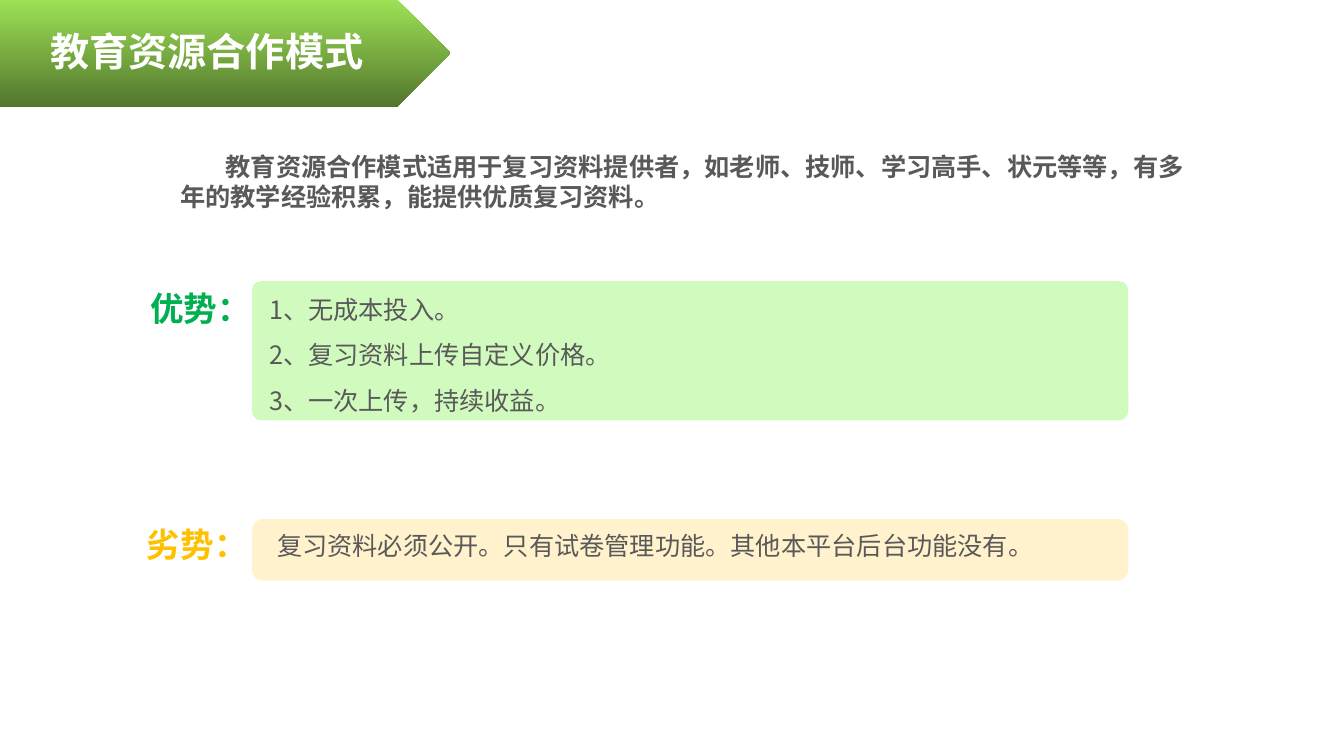
from dataclasses import dataclass

from pptx import Presentation
from pptx.dml.color import RGBColor
from pptx.enum.shapes import MSO_SHAPE
from pptx.enum.text import MSO_ANCHOR
from pptx.oxml.ns import qn
from pptx.oxml.xmlchemy import OxmlElement
from pptx.shapes.autoshape import Shape
from pptx.slide import Slide
from pptx.util import Inches, Pt


@dataclass(frozen=True)
class Theme:
    """Colours, font and type sizes of the slide."""

    font: str = "Noto Sans CJK SC"
    white: str = "FFFFFF"
    body: str = "595959"
    banner_top: str = "9EE256"
    banner_bottom: str = "52762D"
    advantage: str = "00B050"
    advantage_panel: str = "D1FABE"
    drawback: str = "FFC000"
    drawback_panel: str = "FFF2CC"
    title_size: int = 28
    label_size: int = 24
    body_size: int = 18


@dataclass(frozen=True)
class Box:
    """Position and size in inches."""

    left: float
    top: float
    width: float
    height: float

    def lengths(self) -> tuple[Inches, ...]:
        """Return the four measures as lengths."""
        return tuple(Inches(value) for value in (self.left, self.top, self.width, self.height))


@dataclass(frozen=True)
class Section:
    """A coloured label beside a panel of points."""

    label: str
    points: tuple[str, ...]
    label_box: Box
    panel_box: Box
    text_box: Box
    label_color: str
    panel_color: str
    corner: float
    line_spacing: float


THEME = Theme()

SECTIONS = (
    Section(
        "优势：",
        ("1、无成本投入。", "2、复习资料上传自定义价格。", "3、一次上传，持续收益。"),
        Box(1.39, 2.81, 1.2, 0.53),
        Box(2.5, 2.79, 8.69, 1.38),
        Box(2.57, 2.72, 9.51, 1.45),
        THEME.advantage,
        THEME.advantage_panel,
        0.064,
        1.5,
    ),
    Section(
        "劣势：",
        ("复习资料必须公开。只有试卷管理功能。其他本平台后台功能没有。",),
        Box(1.36, 5.15, 1.2, 0.53),
        Box(2.5, 5.15, 8.69, 0.61),
        Box(2.65, 5.21, 8.03, 0.42),
        THEME.drawback,
        THEME.drawback_panel,
        0.182,
        1.0,
    ),
)


def add_text(
    slide: Slide,
    box: Box,
    *lines: str,
    size: int = THEME.body_size,
    color: str = THEME.body,
    bold: bool = False,
    line_spacing: float = 1.0,
    indent: float = 0,
) -> None:
    """Add a text box with one paragraph per line."""
    frame = slide.shapes.add_textbox(*box.lengths()).text_frame
    frame.word_wrap = True
    frame.vertical_anchor = MSO_ANCHOR.TOP
    for index, line in enumerate(lines):
        paragraph = frame.add_paragraph() if index else frame.paragraphs[0]
        paragraph.line_spacing = line_spacing
        if indent:
            paragraph._p.get_or_add_pPr().set("indent", str(Inches(indent)))
        run = paragraph.add_run()
        run.text = line
        run.font.name = THEME.font
        run.font.size = Pt(size)
        run.font.bold = bold
        run.font.color.rgb = RGBColor.from_string(color)
        east_asian = OxmlElement("a:ea")
        east_asian.set("typeface", THEME.font)
        run._r.rPr.find(qn("a:latin")).addnext(east_asian)


def add_plain_shape(slide: Slide, kind: MSO_SHAPE, box: Box) -> Shape:
    """Add a preset shape without outline or shadow."""
    shape = slide.shapes.add_shape(kind, *box.lengths())
    shape.shadow.inherit = False
    shape.line.fill.background()
    return shape


def add_banner(slide: Slide, title: str) -> None:
    """Add the gradient arrow banner and its title."""
    banner = add_plain_shape(slide, MSO_SHAPE.PENTAGON, Box(0, -0.01, 4.47, 1.07))
    banner.fill.gradient()
    banner.fill.gradient_angle = 270
    for stop, color in zip(banner.fill.gradient_stops, (THEME.banner_top, THEME.banner_bottom)):
        stop.color.rgb = RGBColor.from_string(color)
    add_text(slide, Box(0.4, 0.22, 3.37, 0.6), title,
             size=THEME.title_size, color=THEME.white, bold=True)


def add_section(slide: Slide, section: Section) -> None:
    """Add a panel with its label and points."""
    panel = add_plain_shape(slide, MSO_SHAPE.ROUNDED_RECTANGLE, section.panel_box)
    panel.adjustments[0] = section.corner
    panel.fill.solid()
    panel.fill.fore_color.rgb = RGBColor.from_string(section.panel_color)
    add_text(slide, section.label_box, section.label,
             size=THEME.label_size, color=section.label_color, bold=True)
    add_text(slide, section.text_box, *section.points, line_spacing=section.line_spacing)


def main() -> None:
    """Build and save the presentation."""
    presentation = Presentation()
    presentation.slide_width = Inches(13.33)
    presentation.slide_height = Inches(7.5)
    slide = presentation.slides.add_slide(presentation.slide_layouts[6])
    add_banner(slide, "教育资源合作模式")
    add_text(
        slide,
        Box(1.69, 1.45, 10.25, 0.72),
        "教育资源合作模式适用于复习资料提供者，如老师、技师、学习高手、状元等等，"
        "有多年的教学经验积累，能提供优质复习资料。",
        bold=True,
        indent=0.45,
    )
    for section in SECTIONS:
        add_section(slide, section)
    presentation.save("out.pptx")


if __name__ == "__main__":
    main()
